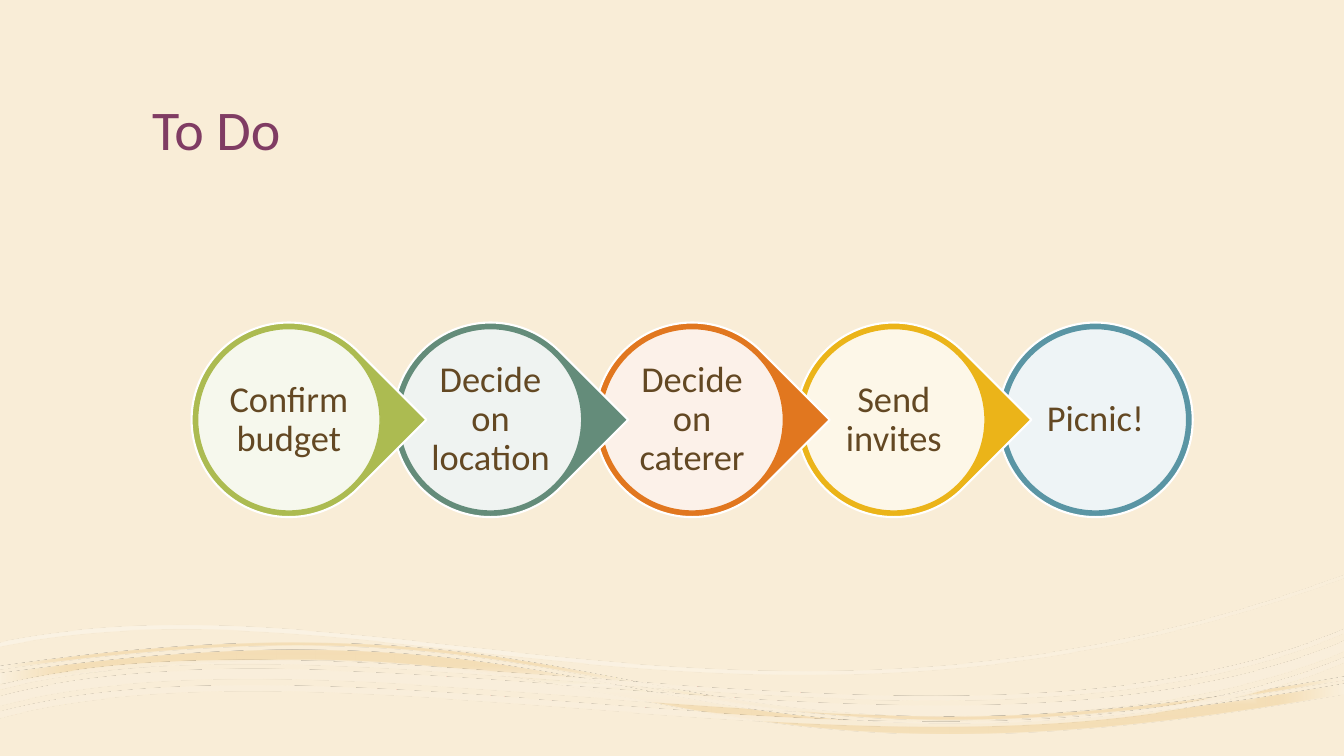
import math
from dataclasses import dataclass

import pptx
import pptx.dml.color
import pptx.enum.shapes
import pptx.enum.text
import pptx.oxml
import pptx.oxml.ns
import pptx.util

Inches, Pt = pptx.util.Inches, pptx.util.Pt
qn = pptx.oxml.ns.qn
MSO = pptx.enum.shapes.MSO_SHAPE
PP_ALIGN = pptx.enum.text.PP_ALIGN
ANCHOR = pptx.enum.text.MSO_ANCHOR
A_NS = "http://schemas.openxmlformats.org/drawingml/2006/main"


@dataclass(frozen=True)
class Theme:
    font: str = "Calibri"
    background: str = "F9EDD7"
    title: str = "803C63"
    body: str = "634823"
    white: str = "FFFFFF"
    title_size: int = 40
    body_size: int = 26


THEME = Theme()

# Steps in reading order: label and accent colour
STEPS = [
    ("Confirm budget", "ACBB51"),
    ("Decide on location", "648C7A"),
    ("Decide on caterer", "E1771F"),
    ("Send invites", "EBB419"),
    ("Picnic!", "5A95A4"),
]
STEP_LEFT, STEP_TOP, STEP_PITCH = 1.9, 3.2, 2.0
RING, DISC, LABEL = 1.93, 1.81, 1.29

# Waves: level box, gradient stops (position, colour, opacity), gradient direction,
# and bands. A band is a closed chain of cubic curves of four points each.
WAVE_ANGLE = -3.5
UNITS = 10000  # outline units per inch
WAVES = [
    ((0.01, 6.12, 13.31, 1.35),
     [(0, "FAF1DF", 90), (18, "F4DEB7", 100), (37, "F4DDB3", 90), (100, "FAF1DF", 100)],
     '<a:path path="shape"><a:fillToRect l="50000" t="50000" r="50000" b="50000"/></a:path>',
     [[[(3.06, 6.45), (6.7, 6.47), (7.38, 7.82), (13.33, 6.78)],
       [(13.33, 6.88), (6.02, 8.16), (6.67, 5.83), (0, 6.78)],
       [(0, 6.68), (1.24, 6.51), (2.22, 6.44), (3.06, 6.45)]],
      [[(3.06, 6.38), (6.7, 6.4), (7.38, 7.75), (13.33, 6.71)],
       [(13.33, 6.74), (6.02, 8.02), (6.67, 5.69), (0, 6.64)],
       [(0, 6.61), (1.24, 6.43), (2.22, 6.37), (3.06, 6.38)]]]),
    ((0.03, 5.88, 13.35, 1.71),
     [(36, "FFFFFF", 30), (100, "F9EDD7", 48)],
     '<a:lin ang="2700000" scaled="0"/>',
     [[[(13.33, 5.73), (7.54, 7.88), (3.73, 5.63), (0, 6.41)],
       [(0, 6.37), (3.73, 5.59), (7.54, 7.84), (13.33, 5.7)]]]),
    ((-0.01, 6.25, 13.36, 1.15),
     [(36, "FFFFFF", 47), (100, "FAEFDC", 82)],
     '<a:path path="rect"><a:fillToRect l="100000" t="100000" r="0" b="0"/></a:path>',
     [[[(13.33, 6.57), (9.55, 8.15), (3.49, 6.18), (0, 7.12)],
       [(0, 7.06), (3.49, 6.12), (9.55, 8.1), (13.33, 6.52)]],
      [[(13.33, 6.46), (9.55, 8.04), (3.49, 6.06), (0, 7)],
       [(0, 6.91), (3.49, 5.96), (9.55, 7.94), (13.33, 6.36)]],
      [[(13.33, 6.28), (9.58, 7.9), (3.51, 5.93), (0, 6.84)],
       [(0, 6.8), (3.51, 5.89), (9.58, 7.86), (13.33, 6.24)]]]),
]


def rgb(color):
    return pptx.dml.color.RGBColor.from_string(color)


def set_format(obj, values):
    for name, value in values.items():
        setattr(obj, name, value)


def level(point, box):
    """Undo the wave tilt; return outline units from the box corner."""
    left, top, width, height = box
    angle = math.radians(-WAVE_ANGLE)
    dx, dy = point[0] - left - width / 2, point[1] - top - height / 2
    return (round((width / 2 + dx * math.cos(angle) - dy * math.sin(angle)) * UNITS),
            round((height / 2 + dx * math.sin(angle) + dy * math.cos(angle)) * UNITS))


def set_gradient(sp, stops, direction):
    stop_xml = "".join(
        f'<a:gs pos="{pos * 1000}"><a:srgbClr val="{color}">'
        f'<a:alpha val="{opacity * 1000}"/></a:srgbClr></a:gs>'
        for pos, color, opacity in stops)
    grad = pptx.oxml.parse_xml(
        f'<a:gradFill xmlns:a="{A_NS}" rotWithShape="1">'
        f'<a:gsLst>{stop_xml}</a:gsLst>{direction}</a:gradFill>')
    sp.fill.background()
    spPr = sp._element.spPr
    spPr.replace(spPr.find(qn("a:noFill")), grad)


def set_curves(sp, bands, box):
    """Give the freeform cubic curves in place of straight sides."""
    def command(tag, points):
        pts = "".join(f'<a:pt x="{x}" y="{y}"/>' for x, y in points)
        return f"<a:{tag}>{pts}</a:{tag}>"

    xml = ""
    for band in bands:
        end = None
        for curve in band:
            start, *rest = curve
            if start != end:
                xml += command("lnTo" if end else "moveTo", [level(start, box)])
            xml += command("cubicBezTo", [level(pt, box) for pt in rest])
            end = rest[-1]
        xml += "<a:close/>"
    width, height = (round(v * UNITS) for v in box[2:])
    outline = sp._element.spPr.find(".//" + qn("a:path"))
    outline.getparent().replace(outline, pptx.oxml.parse_xml(
        f'<a:path xmlns:a="{A_NS}" w="{width}" h="{height}">{xml}</a:path>'))


def add_wave(s, box, stops, direction, bands):
    """Build the bands level, then tilt the whole shape."""
    corners = [level(curve[0], box) for band in bands for curve in band]
    builder = s.shapes.build_freeform(*corners[0], scale=Inches(1) / UNITS)
    builder.add_line_segments(corners[1:], close=True)
    sp = builder.convert_to_shape()
    set_curves(sp, bands, box)
    left, top, width, height = (Inches(v) for v in box)
    set_format(sp, {"left": left, "top": top, "width": width, "height": height,
                    "rotation": WAVE_ANGLE})
    set_gradient(sp, stops, direction)
    sp.line.fill.background()
    sp.shadow.inherit = False


def add_round(s, kind, center, size, fill, line, width, opacity=100):
    x, y = (Inches(c - size / 2) for c in center)
    sp = s.shapes.add_shape(kind, x, y, Inches(size), Inches(size))
    sp.shadow.inherit = False
    sp.fill.solid()
    sp.fill.fore_color.rgb = rgb(fill)
    if opacity < 100:
        clr = sp._element.spPr.find(".//" + qn("a:srgbClr"))
        clr.append(pptx.oxml.parse_xml(
            f'<a:alpha xmlns:a="{A_NS}" val="{opacity * 1000}"/>'))
    sp.line.color.rgb = rgb(line)
    sp.line.width = Pt(width)
    return sp


def add_text(s, text, box, size, color, frame, align=PP_ALIGN.LEFT):
    tf = s.shapes.add_textbox(*(Inches(v) for v in box)).text_frame
    set_format(tf, {"word_wrap": True, **frame})
    p = tf.paragraphs[0]
    set_format(p, {"alignment": align, "line_spacing": 0.9})
    r = p.add_run()
    r.text = text
    set_format(r.font, {"name": THEME.font, "size": Pt(size)})
    r.font.color.rgb = rgb(color)


def add_step(s, index, label, color):
    center = (STEP_LEFT + index * STEP_PITCH + RING / 2, STEP_TOP + RING / 2)
    last = index == len(STEPS) - 1
    ring = add_round(s, MSO.OVAL if last else MSO.TEAR, center, RING,
                     color, THEME.white, 1.5)
    ring.rotation = 0 if last else 45
    add_round(s, MSO.OVAL, center, DISC, THEME.white, color, 1, opacity=90)
    margins = {f"margin_{side}": Inches(0.04) for side in ("left", "top", "right", "bottom")}
    add_text(s, label, (center[0] - LABEL / 2, center[1] - LABEL / 2, LABEL, LABEL),
             THEME.body_size, THEME.body,
             {"vertical_anchor": ANCHOR.MIDDLE, **margins}, PP_ALIGN.CENTER)


def main():
    prs = pptx.Presentation()
    set_format(prs, {"slide_width": Inches(13.33), "slide_height": Inches(7.5)})
    s = prs.slides.add_slide(prs.slide_layouts[6])
    s.background.fill.solid()
    s.background.fill.fore_color.rgb = rgb(THEME.background)

    # Decorative waves
    for wave in WAVES:
        add_wave(s, *wave)

    # Title
    add_text(s, "To Do", (1.41, 0.33, 10.5, 1.33), THEME.title_size, THEME.title,
             {"vertical_anchor": ANCHOR.BOTTOM})

    # Process steps, last one at the back so each tip overlaps the next ring
    for index, (label, color) in reversed(list(enumerate(STEPS))):
        add_step(s, index, label, color)

    prs.save("out.pptx")


if __name__ == "__main__":
    main()
